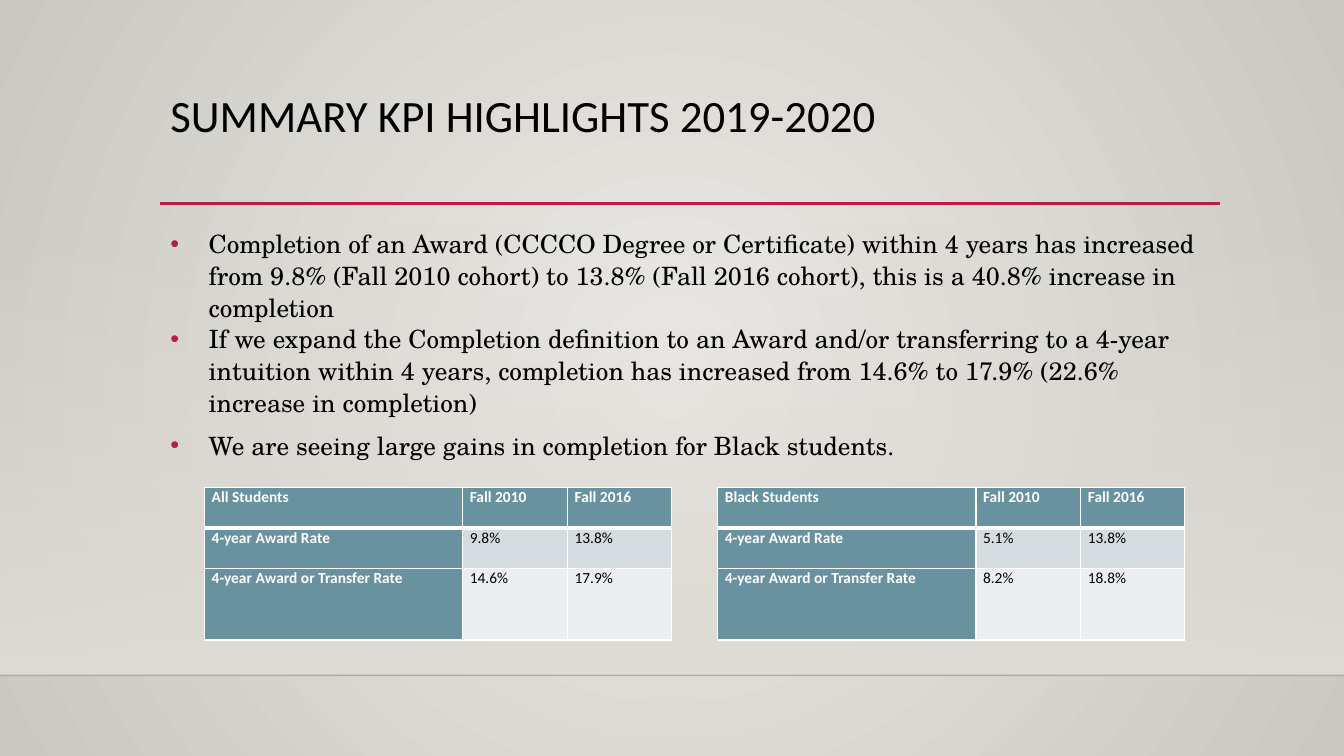
from dataclasses import dataclass

import lxml.etree
import pptx
import pptx.dml.color
import pptx.enum.shapes
import pptx.enum.text
import pptx.oxml
import pptx.oxml.ns
import pptx.util

RGBColor = pptx.dml.color.RGBColor
BLACK = RGBColor(0x00, 0x00, 0x00)
WHITE = RGBColor(0xFF, 0xFF, 0xFF)
HORIZON = RGBColor(0x00, 0x00, 0x01)
CRIMSON = RGBColor(0xB7, 0x1E, 0x42)
TEAL = RGBColor(0x68, 0x92, 0xA0)
BAND_DARK = RGBColor(0xD4, 0xDC, 0xDF)
BAND_LIGHT = RGBColor(0xEB, 0xEE, 0xF0)
GLOW = RGBColor(0xEC, 0xEA, 0xE7)
EDGE = RGBColor(0xCA, 0xC7, 0xC1)
WALL = RGBColor(0xDF, 0xDB, 0xD5)

SANS = "Calibri"
SERIF = "TeX Gyre Schola"
COLUMNS, ROWS = 133.3, 75  # grid of square cells, ten to the inch
CELL = pptx.util.Inches(0.1)

TITLE = "SUMMARY KPI HIGHLIGHTS 2019-2020"


@dataclass(frozen=True)
class Bullet:
    text: str
    after: float


@dataclass(frozen=True)
class Rule:
    left: float
    right: float
    row: float
    color: RGBColor
    width: float
    opacity: int = 100


@dataclass(frozen=True)
class RateTable:
    column: float
    group: str
    award: tuple[str, str]
    transfer: tuple[str, str]


BULLETS = [
    Bullet("Completion of an Award (CCCCO Degree or Certificate) within 4 years has increased "
           "from 9.8% (Fall 2010 cohort) to 13.8% (Fall 2016 cohort), this is a 40.8% increase "
           "in completion", 0),
    Bullet("If we expand the Completion definition to an Award and/or transferring to a 4-year "
           "intuition within 4 years, completion has increased from 14.6% to 17.9% (22.6% "
           "increase in completion)", 8),
    Bullet("We are seeing large gains in completion for Black students.", 8),
]
RULES = [
    Rule(0, COLUMNS, 67, HORIZON, 1, opacity=20),
    Rule(15.9, 121, 20.2, CRIMSON, 2.5),
]
TABLES = [
    RateTable(20.3, "All Students", ("9.8%", "13.8%"), ("14.6%", "17.9%")),
    RateTable(71.2, "Black Students", ("5.1%", "13.8%"), ("8.2%", "18.8%")),
]
TABLE_COLUMNS = (25.6, 10.4, 10.3)
TABLE_ROWS = (4, 4, 7.1)


def cells(count: float) -> int:
    return round(count * CELL)


def area(column: float, row: float, width: float, height: float) -> tuple[int, ...]:
    return tuple(cells(count) for count in (column, row, width, height))


def child(parent, tag: str, **attributes):
    element = lxml.etree.SubElement(parent, pptx.oxml.ns.qn(tag))
    for name, value in attributes.items():
        element.set(name, str(value))
    return element


def find(element, tag: str):
    return next(element.iter(pptx.oxml.ns.qn(tag)))


def write(para, text: str, *, size: float, font: str, color: RGBColor,
          bold: bool = False, spacing: float = 1.0, after: float = 0) -> None:
    para.alignment = pptx.enum.text.PP_ALIGN.LEFT
    para.line_spacing = spacing
    para.space_before = pptx.util.Pt(0)
    para.space_after = pptx.util.Pt(after)
    span = para.add_run()
    span.text = text
    span.font.size = pptx.util.Pt(size)
    span.font.name = font
    span.font.bold = bold
    span.font.color.rgb = color


def set_gradient(fill, colors: tuple[RGBColor, RGBColor]) -> None:
    fill.gradient()
    for stop, color in zip(fill.gradient_stops, colors):
        stop.color.rgb = color


def paint_background(page) -> None:
    set_gradient(page.background.fill, (GLOW, EDGE))
    linear = find(page.element, "a:lin")
    gradient = linear.getparent()
    gradient.remove(linear)
    circle = child(gradient, "a:path", path="circle")
    child(circle, "a:fillToRect", l=50000, t=50000, r=50000, b=50000)


def draw_wall(page):
    wall = page.shapes.add_shape(pptx.enum.shapes.MSO_SHAPE.RECTANGLE,
                                 *area(0, 22.1, COLUMNS, 44.9))
    wall.shadow.inherit = False
    wall.line.fill.background()
    set_gradient(wall.fill, (WALL, WALL))
    find(wall.element, "a:lin").set("ang", "5400000")
    child(find(wall.element, "a:srgbClr"), "a:alpha", val=0)
    return wall


def draw_rule(page, rule: Rule):
    line = page.shapes.add_connector(
        pptx.enum.shapes.MSO_CONNECTOR.STRAIGHT,
        cells(rule.left), cells(rule.row), cells(rule.right), cells(rule.row))
    line.line.color.rgb = rule.color
    line.line.width = pptx.util.Pt(rule.width)
    if rule.opacity < 100:
        child(find(line.element, "a:srgbClr"), "a:alpha", val=rule.opacity * 1000)
    child(find(line.element, "p:spPr"), "a:effectLst")
    return line


def place(holder, column: float, row: float, width: float, height: float) -> None:
    holder.left, holder.top, holder.width, holder.height = area(column, row, width, height)
    holder.text_frame.word_wrap = True
    holder.text_frame.auto_size = pptx.enum.text.MSO_AUTO_SIZE.NONE
    holder.text_frame.vertical_anchor = pptx.enum.text.MSO_ANCHOR.TOP


def write_bullets(frame, bullets: list[Bullet]) -> None:
    for index, bullet in enumerate(bullets):
        para = frame.add_paragraph() if index else frame.paragraphs[0]
        properties = para._p.get_or_add_pPr()
        properties.set("marL", str(cells(3.8)))
        properties.set("indent", str(-cells(3.8)))
        child(child(properties, "a:buClr"), "a:srgbClr", val=CRIMSON)
        child(properties, "a:buFont", typeface="Arial")
        child(properties, "a:buChar", char="•")
        write(para, bullet.text, size=18, font=SERIF, color=BLACK,
              spacing=1.05, after=bullet.after)


def set_borders(cell, widths: dict[str, float]) -> None:
    properties = cell._tc.get_or_add_tcPr()
    for side, width in widths.items():
        border = child(properties, f"a:ln{side}", w=pptx.util.Pt(width))
        child(child(border, "a:solidFill"), "a:srgbClr", val=WHITE)


def draw_table(page, rates: RateTable) -> None:
    content = [(rates.group, "Fall 2010", "Fall 2016"),
               ("4-year Award Rate", *rates.award),
               ("4-year Award or Transfer Rate", *rates.transfer)]
    frame = page.shapes.add_table(
        len(TABLE_ROWS), len(TABLE_COLUMNS),
        *area(rates.column, 48.4, sum(TABLE_COLUMNS), sum(TABLE_ROWS)))
    table = frame.table
    table.horz_banding = False
    for column, width in zip(table.columns, TABLE_COLUMNS):
        column.width = cells(width)
    for row, height in zip(table.rows, TABLE_ROWS):
        row.height = cells(height)
    for r, line in enumerate(content):
        for c, text in enumerate(line):
            heading = r == 0 or c == 0
            cell = table.cell(r, c)
            cell.margin_left = cell.margin_right = cells(0.7)
            cell.margin_top = cell.margin_bottom = 0
            set_borders(cell, {"L": 1, "R": 1, "T": 3 if r == 1 else 1, "B": 3 if r == 0 else 1})
            cell.fill.solid()
            cell.fill.fore_color.rgb = TEAL if heading else (BAND_DARK if r == 1 else BAND_LIGHT)
            write(cell.text_frame.paragraphs[0], text, size=11, font=SANS,
                  color=WHITE if heading else BLACK, bold=heading)


def main() -> None:
    deck = pptx.Presentation()
    deck.slide_width, deck.slide_height = cells(COLUMNS), cells(ROWS)
    page = deck.slides.add_slide(deck.slide_layouts[1])
    title, body = page.shapes.title, page.placeholders[1]

    # Backdrop, kept behind the text
    paint_background(page)
    for shape in [draw_wall(page), *(draw_rule(page, rule) for rule in RULES)]:
        title.element.addprevious(shape.element)

    # Title and bullets
    place(title, 15.9, 8.8, 105, 11.5)
    write(title.text_frame.paragraphs[0], TITLE, size=32, font=SANS, color=BLACK, spacing=0.9)
    place(body, 15.9, 22, 105, 37.7)
    write_bullets(body.text_frame, BULLETS)

    # Completion rates by group
    for rates in TABLES:
        draw_table(page, rates)
    deck.save("out.pptx")


if __name__ == "__main__":
    main()
